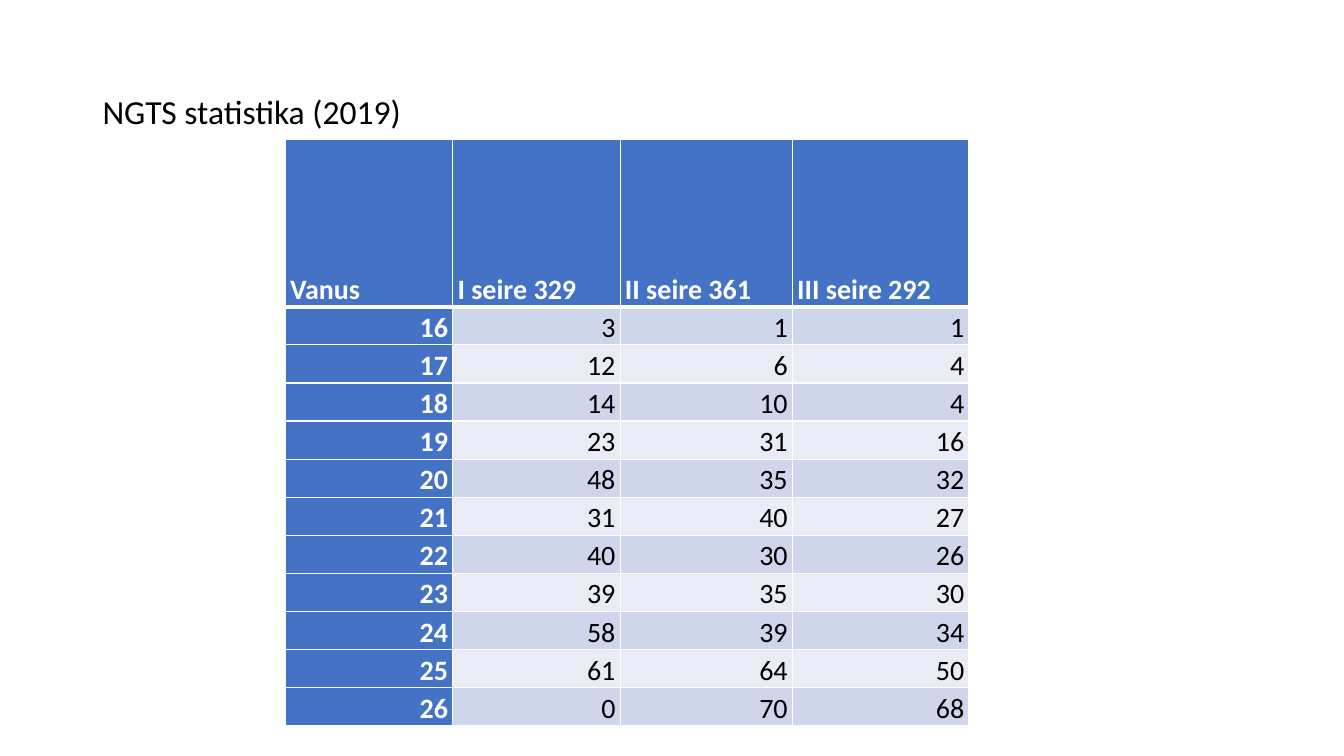
from dataclasses import dataclass

from lxml import etree
from pptx import Presentation
from pptx import util as u
from pptx.dml.color import RGBColor
from pptx.enum import text
from pptx.oxml import ns

# Content
TITLE = "NGTS statistika (2019)"
HEADERS = ["Vanus", "I seire 329", "II seire 361", "III seire 292"]
COUNTS_BY_AGE = [
    (16, 3, 1, 1),
    (17, 12, 6, 4),
    (18, 14, 10, 4),
    (19, 23, 31, 16),
    (20, 48, 35, 32),
    (21, 31, 40, 27),
    (22, 40, 30, 26),
    (23, 39, 35, 30),
    (24, 58, 39, 34),
    (25, 61, 64, 50),
    (26, 0, 70, 68),
]


# Look
@dataclass(frozen=True)
class Theme:
    font: str = "Calibri"
    title_size: int = 24
    cell_size: int = 20
    dark: str = "000000"
    light: str = "FFFFFF"
    accent: str = "4472C4"
    bands: tuple = ("CFD5EA", "E9EBF5")
    thin: int = 1
    thick: int = 3


THEME = Theme()

# Layout, in centimetres
TITLE_BOX = (2.33, 1.02, 29.21, 3.68)
TABLE_LEFT, TABLE_TOP = 7.19, 3.51
COL_WIDTHS = [4.22, 4.22, 4.34, 4.45]
HEADER_HEIGHT, ROW_HEIGHT = 4.22, 0.96
CELL_INSET = 0.12


def style_paragraph(p, size, color, bold, align, spacing):
    p.alignment = align
    p.line_spacing = spacing
    p.font.name = THEME.font
    p.font.size = u.Pt(size)
    p.font.bold = bold
    p.font.color.rgb = RGBColor.from_string(color)


def set_borders(cell, top, bottom):
    """Draw the four cell edges; they must precede the fill in tcPr."""
    tc_pr = cell._tc.get_or_add_tcPr()
    widths = {"lnL": THEME.thin, "lnR": THEME.thin, "lnT": top, "lnB": bottom}
    for i, (edge, width) in enumerate(widths.items()):
        ln = etree.Element(ns.qn(f"a:{edge}"), w=str(u.Pt(width)))
        fill = etree.SubElement(ln, ns.qn("a:solidFill"))
        etree.SubElement(fill, ns.qn("a:srgbClr"), val=THEME.light)
        tc_pr.insert(i, ln)


def fill_cell(cell, value, row, col):
    is_header = row == 0
    strong = is_header or col == 0
    cell.text = str(value)
    cell.vertical_anchor = text.MSO_ANCHOR.BOTTOM
    cell.margin_left = cell.margin_right = u.Cm(CELL_INSET)
    cell.margin_top = cell.margin_bottom = 0
    cell.fill.solid()
    background = THEME.accent if strong else THEME.bands[(row - 1) % 2]
    cell.fill.fore_color.rgb = RGBColor.from_string(background)
    style_paragraph(
        cell.text_frame.paragraphs[0],
        THEME.cell_size,
        THEME.light if strong else THEME.dark,
        strong,
        text.PP_ALIGN.LEFT if is_header else text.PP_ALIGN.RIGHT,
        1.07,
    )
    set_borders(
        cell,
        top=THEME.thick if row == 1 else THEME.thin,
        bottom=THEME.thick if is_header else THEME.thin,
    )


def add_title(s):
    sp = s.shapes.title
    sp.left, sp.top, sp.width, sp.height = map(u.Cm, TITLE_BOX)
    tf = sp.text_frame
    tf.text = TITLE
    tf.vertical_anchor = text.MSO_ANCHOR.MIDDLE
    style_paragraph(tf.paragraphs[0], THEME.title_size, THEME.dark, False,
                    text.PP_ALIGN.LEFT, 0.9)


def add_statistics(s):
    rows = [HEADERS, *COUNTS_BY_AGE]
    heights = [HEADER_HEIGHT] + [ROW_HEIGHT] * len(COUNTS_BY_AGE)
    box = (TABLE_LEFT, TABLE_TOP, sum(COL_WIDTHS), sum(heights))
    table = s.shapes.add_table(len(rows), len(HEADERS), *map(u.Cm, box)).table
    table.first_col = True
    for column, width in zip(table.columns, COL_WIDTHS):
        column.width = u.Cm(width)
    for r, (values, height) in enumerate(zip(rows, heights)):
        table.rows[r].height = u.Cm(height)
        for c, value in enumerate(values):
            fill_cell(table.cell(r, c), value, r, c)


def main():
    prs = Presentation()
    prs.slide_width, prs.slide_height = u.Cm(33.87), u.Cm(19.05)
    s = prs.slides.add_slide(prs.slide_layouts[5])  # Title Only
    add_title(s)
    add_statistics(s)
    prs.save("out.pptx")


if __name__ == "__main__":
    main()
